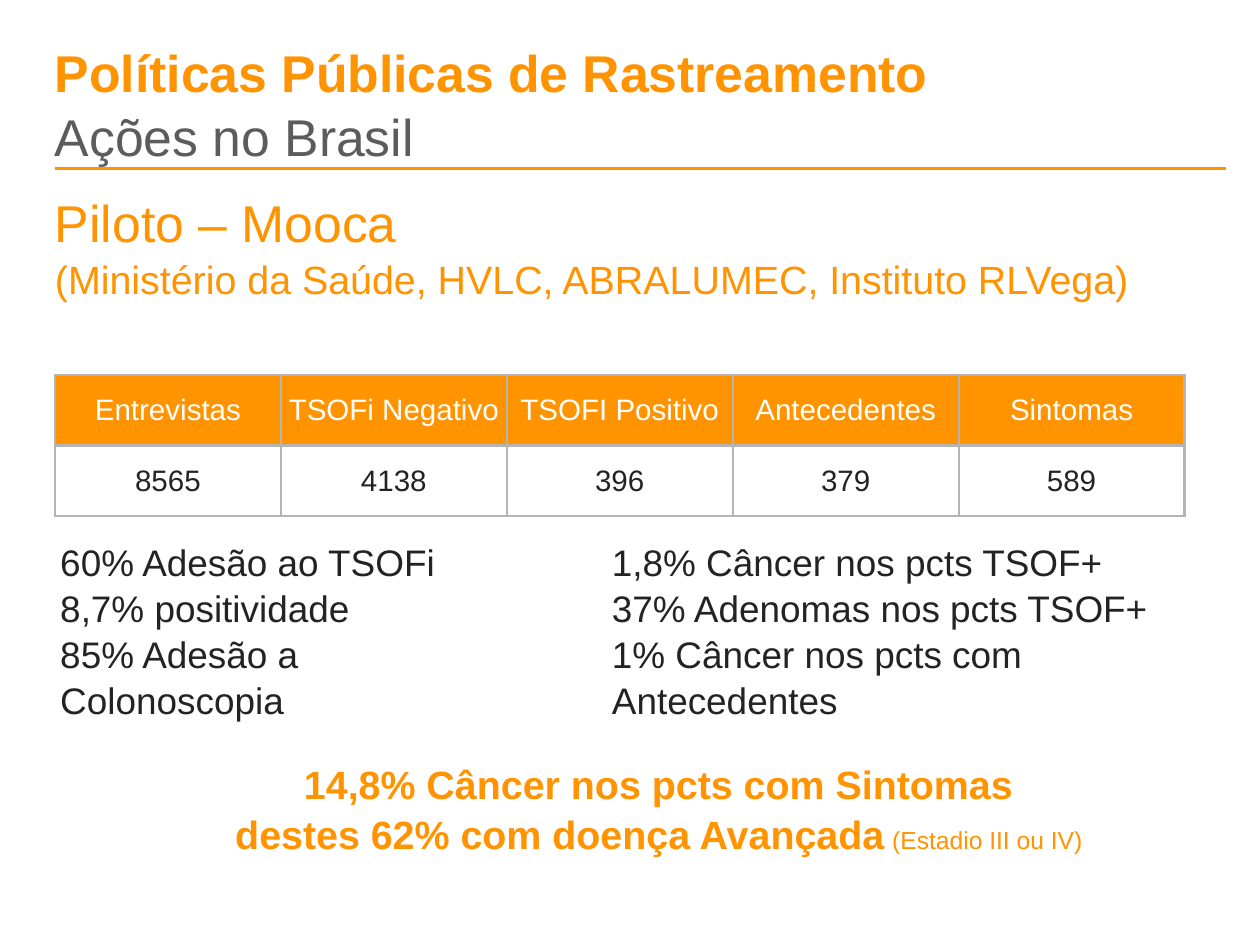
from pptx import Presentation
from pptx.dml.color import RGBColor as Rgb
from pptx.enum.shapes import MSO_CONNECTOR as Conn
from pptx.enum.text import MSO_ANCHOR as Anchor, PP_ALIGN as Align
from pptx.oxml import parse_xml
from pptx.oxml.ns import nsdecls
from pptx.util import Pt

ORANGE, GRAY, DARK, WHITE, EDGE = "FF9300", "5C5C5C", "232323", "FFFFFF", "B4B4B4"


def color(code):
    return Rgb.from_string(code)


class Deck:
    """Holds the style and the current slide, and draws each kind of element."""

    font = "Arial"
    left = 44.64
    pad = 4.32

    def __init__(self, wide, high):
        self.show = Presentation()
        self.show.slide_width, self.show.slide_height = Pt(wide), Pt(high)
        self.slide = self.show.slides.add_slide(self.show.slide_layouts[5])

    def style(self, run, size, ink, bold=False):
        font = run.font
        font.name, font.size, font.bold = self.font, Pt(size), bold
        font.color.rgb = color(ink)

    def fill(self, shape, box, lines, anchor, align=Align.LEFT, pad=0, gap=1.04):
        shape.left, shape.top, shape.width, shape.height = map(Pt, box)
        frame = shape.text_frame
        frame.word_wrap, frame.vertical_anchor = True, anchor
        frame.margin_left = frame.margin_right = Pt(pad)
        frame.margin_top = frame.margin_bottom = Pt(pad)
        frame.text = "\n".join(line[0] for line in lines)
        for par, (_, *look) in zip(frame.paragraphs, lines):
            par.alignment, par.line_spacing = align, gap
            par.space_before = par.space_after = Pt(0)
            self.style(par.runs[0], *look)
        return frame

    def title(self, box, lines):
        self.fill(self.slide.shapes.title, box, lines, Anchor.BOTTOM)

    def text(self, box, lines, anchor=Anchor.MIDDLE, **more):
        shape = self.slide.shapes.add_textbox(*map(Pt, box))
        return self.fill(shape, box, lines, anchor, **more)

    def rule(self, top, right):
        ends = map(Pt, (self.left, top, right, top))
        line = self.slide.shapes.add_connector(Conn.STRAIGHT, *ends)
        line.line.color.rgb, line.line.width = color(ORANGE), Pt(2)
        line._element.spPr.append(parse_xml(f"<a:effectLst {nsdecls('a')}/>"))

    def cell(self, cell, text, ink, back):
        cell.text = text
        cell.vertical_anchor = Anchor.MIDDLE
        cell.margin_left = cell.margin_right = Pt(self.pad)
        cell.margin_top = cell.margin_bottom = Pt(self.pad)
        par = cell.text_frame.paragraphs[0]
        par.alignment = Align.CENTER
        self.style(par.runs[0], 24, ink)
        props = cell._tc.get_or_add_tcPr()
        for side in ("lnL", "lnR", "lnT", "lnB"):
            props.append(parse_xml(
                f'<a:{side} {nsdecls("a")} w="{Pt(2)}"><a:solidFill>'
                f'<a:srgbClr val="{EDGE}"/></a:solidFill></a:{side}>'))
        cell.fill.solid()
        cell.fill.fore_color.rgb = color(back)

    def table(self, top, wide, high, rows, looks):
        size = map(Pt, (self.left, top, wide, high))
        grid = self.slide.shapes.add_table(len(rows), len(rows[0]), *size).table
        for r, (row, look) in enumerate(zip(rows, looks)):
            for c, text in enumerate(row):
                self.cell(grid.cell(r, c), text, *look)


def main():
    deck = Deck(1024, 768)
    left, pad = deck.left, deck.pad
    deck.title((left, 26, 934, 110), [
        ("Políticas Públicas de Rastreamento", 42, ORANGE, True),
        ("Ações no Brasil", 42, GRAY)])
    deck.rule(136.8, 996.5)
    deck.text((left, 153.4, 970, 90), [
        ("Piloto – Mooca", 42, ORANGE),
        ("(Ministério da Saúde, HVLC, ABRALUMEC, Instituto RLVega)", 32, ORANGE)],
        anchor=Anchor.TOP)
    deck.table(304.6, 918, 115, [
        ("Entrevistas", "TSOFi Negativo", "TSOFI Positivo", "Antecedentes", "Sintomas"),
        ("8565", "4138", "396", "379", "589")],
        [(WHITE, ORANGE), (DARK, WHITE)])
    facts = [
        (left, 386, ("60% Adesão ao TSOFi", "8,7% positividade",
                     "85% Adesão a Colonoscopia")),
        (493, 531, ("1,8% Câncer nos pcts TSOF+", "37% Adenomas nos pcts TSOF+",
                    "1% Câncer nos pcts com Antecedentes"))]
    for x, wide, lines in facts:
        deck.text((x, 454.3, wide, 115), [(line, 30, DARK) for line in lines], pad=pad)
    frame = deck.text((186, 614, 699, 85), [
        ("14,8% Câncer nos pcts com Sintomas", 32, ORANGE, True),
        ("destes 62% com doença Avançada", 32, ORANGE, True)],
        align=Align.CENTER, pad=pad)
    note = frame.paragraphs[1].add_run()
    note.text = " (Estadio III ou IV)"
    deck.style(note, 20, ORANGE)
    deck.show.save("out.pptx")


if __name__ == "__main__":
    main()
